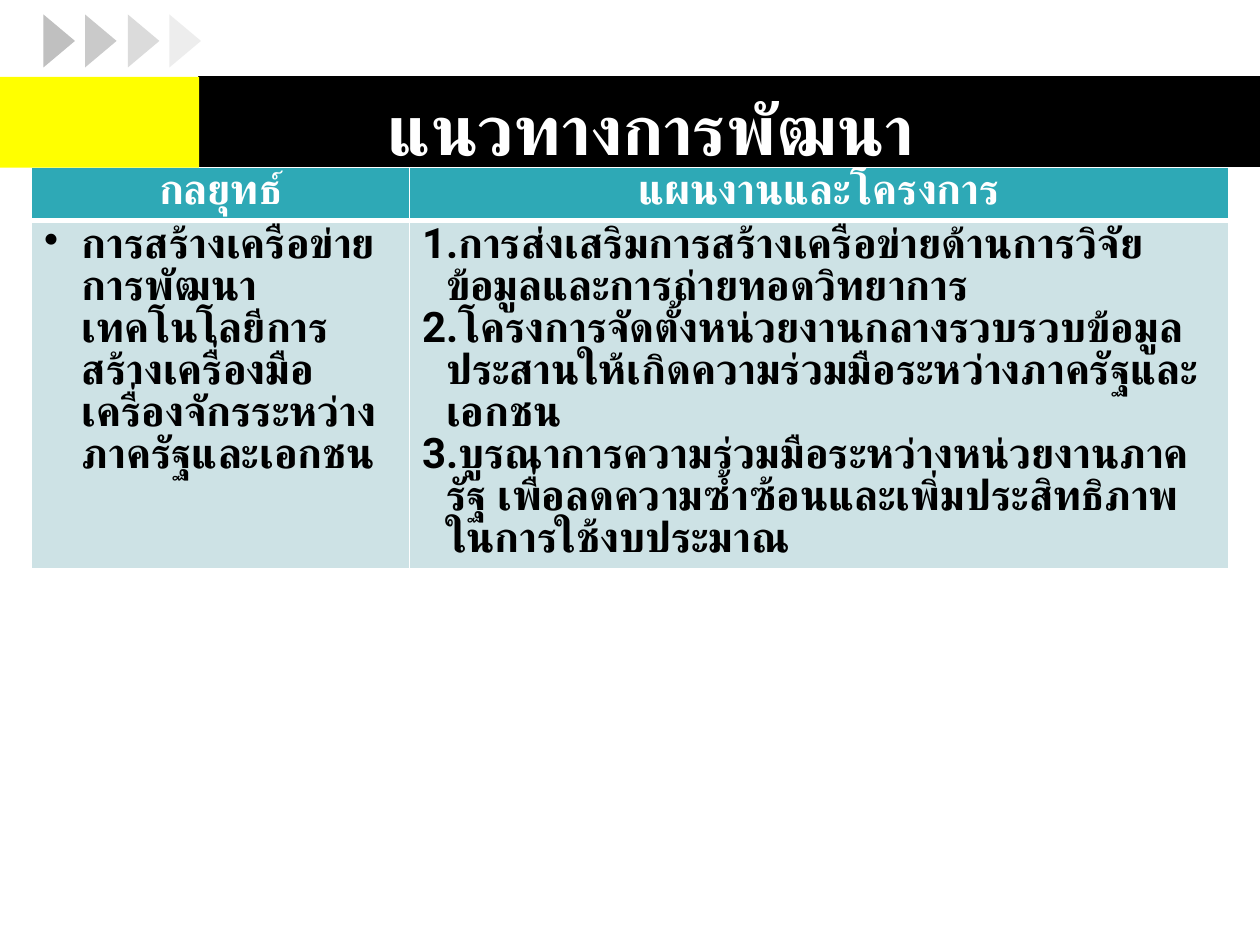
from lxml.etree import SubElement as Sub
from pptx import Presentation
from pptx.dml.color import RGBColor as RGB
from pptx.enum.shapes import MSO_SHAPE as Shape
from pptx.enum.text import MSO_ANCHOR as Anchor, MSO_AUTO_SIZE as Auto, PP_ALIGN as Align
from pptx.oxml.ns import qn
from pptx.util import Pt

PX = 9144
FONT = "Roboto"
WHITE = RGB(255, 255, 255)
BLACK = RGB(0, 0, 0)
YELLOW = RGB(255, 255, 0)
GREY = RGB(0xC0, 0xC0, 0xC0)
TEAL = RGB(0x2E, 0xA9, 0xB6)
PALE = RGB(0xCD, 0xE2, 0xE5)

TITLE = "แนวทางการพัฒนา"
HEADS = ["กลยุทธ์", "แผนงานและโครงการ"]
PLAN = ["การสร้างเครือข่ายการพัฒนาเทคโนโลยีการสร้างเครื่องมือเครื่องจักรระหว่างภาครัฐและเอกชน"]
WORKS = [
    "การส่งเสริมการสร้างเครือข่ายด้านการวิจัยข้อมูลและการถ่ายทอดวิทยาการ",
    "โครงการจัดตั้งหน่วยงานกลางรวบรวบข้อมูล ประสานให้เกิดความร่วมมือระหว่างภาครัฐและเอกชน",
    "บูรณาการความร่วมมือระหว่างหน่วยงานภาครัฐ เพื่อลดความซ้ำซ้อนและเพิ่มประสิทธิภาพในการใช้งบประมาณ",
]


def scale(*nums):
    """Turn px into EMU."""
    return [n * PX for n in nums]


def style(para, size, color):
    """Format every run of a paragraph."""
    for run in para.runs:
        font = run.font
        font.name, font.size, font.bold = FONT, Pt(size), True
        font.color.rgb = color
        Sub(run._r.get_or_add_rPr(), qn("a:cs"), typeface=FONT)


def block(slide, kind, box, color):
    """Add a plain filled shape."""
    shape = slide.shapes.add_shape(kind, *scale(*box))
    shape.shadow.inherit = False
    shape.fill.solid()
    shape.fill.fore_color.rgb = color
    shape.line.fill.background()
    return shape


def arrows(slide, left, top):
    """Draw the row of fading arrows."""
    for i, alpha in enumerate([100, 84, 56, 27]):
        box = (left + round(33.4 * i), top, 42, 25)
        shape = block(slide, Shape.ISOSCELES_TRIANGLE, box, GREY)
        shape.rotation = 90
        color = shape.fill._xPr.find(".//" + qn("a:srgbClr"))
        Sub(color, qn("a:alpha"), val=str(alpha * 1000))


def banner(slide, left, top, width, height):
    """Draw the two-colour band and place the title on it."""
    split = 158
    bar = block(slide, Shape.RECTANGLE, (left + split, top, width - split, height - 1), BLACK)
    bar.line.color.rgb = BLACK
    bar.line.width = Pt(0.75)
    block(slide, Shape.RECTANGLE, (left, top, split, height), YELLOW)
    title = slide.shapes.title
    title.left, title.top, title.width, title.height = scale(left + 283, top + 2, 467, 77)
    frame = title.text_frame
    frame.text = TITLE
    frame.word_wrap = True
    frame.auto_size = Auto.SHAPE_TO_FIT_TEXT
    frame.vertical_anchor = Anchor.TOP
    para = frame.paragraphs[0]
    para.alignment = Align.CENTER
    style(para, 40, WHITE)
    title.element.getparent().append(title.element)


def paint(cell, color, base):
    """Give a cell white borders and a fill."""
    props = cell._tc.get_or_add_tcPr()
    for side, width in zip("LRTB", [1, 1, 1, base]):
        line = Sub(props, qn(f"a:ln{side}"), w=str(Pt(width)))
        Sub(Sub(line, qn("a:solidFill")), qn("a:srgbClr"), val=str(WHITE))
    cell.fill.solid()
    cell.fill.fore_color.rgb = color


def write(cell, lines, color, indent=0, mark=None):
    """Fill a cell with paragraphs, centred unless they are marked."""
    frame = cell.text_frame
    frame.text = "\n".join(lines)
    for para in frame.paragraphs:
        para.line_spacing = Pt(24)
        if mark:
            props = para._p.get_or_add_pPr()
            props.set("marL", str(indent * PX))
            props.set("indent", str(-indent * PX))
            tag, attrs = mark
            Sub(props, qn(tag), **attrs)
        else:
            para.alignment = Align.CENTER
        style(para, 24, color)


def grid(slide, left, top, width, height):
    """Build the table of strategies and projects."""
    table = slide.shapes.add_table(2, 2, *scale(left, top, width, height)).table
    table.horz_banding = False
    table.columns[0].width, table.columns[1].width = scale(300, width - 300)
    table.rows[0].height, table.rows[1].height = scale(42, height - 42)
    for col, head in enumerate(HEADS):
        cell = table.cell(0, col)
        cell.margin_top = cell.margin_bottom = 4 * PX
        paint(cell, TEAL, 3)
        write(cell, [head], WHITE)
        paint(table.cell(1, col), PALE, 1)
    write(table.cell(1, 0), PLAN, BLACK, 30, ("a:buChar", {"char": "•"}))
    write(table.cell(1, 1), WORKS, BLACK, 19, ("a:buAutoNum", {"type": "arabicPeriod"}))


def main():
    """Build and save the slide."""
    deck = Presentation()
    deck.slide_width, deck.slide_height = scale(1000, 750)
    slide = deck.slides.add_slide(deck.slide_layouts[5])
    arrows(slide, 26, 20)
    grid(slide, 25, 133, 950, 318)
    banner(slide, 0, 61, 1000, 72)
    deck.save("out.pptx")


if __name__ == "__main__":
    main()
